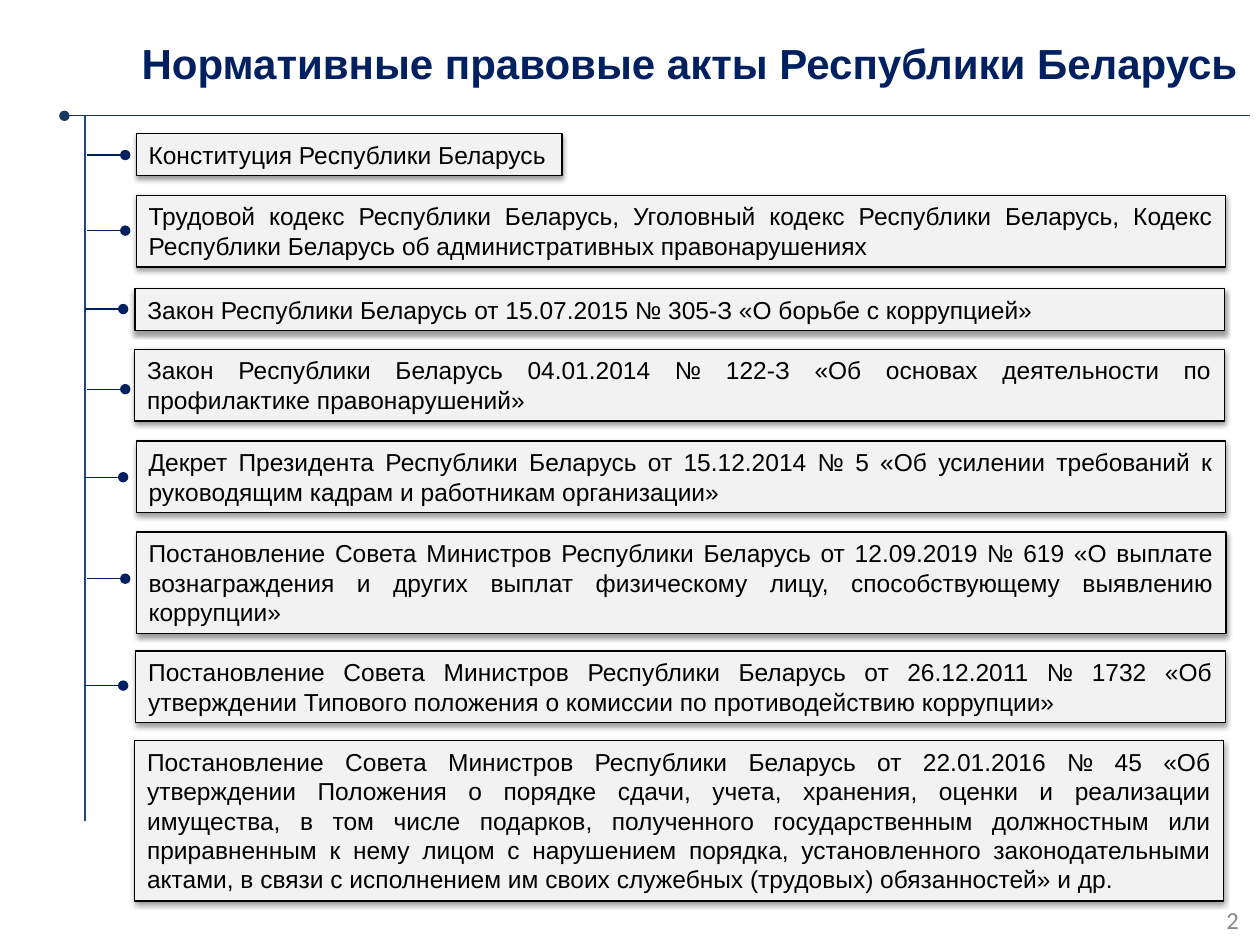
from lxml import etree
from pptx import Presentation
from pptx.dml.color import RGBColor
from pptx.enum.shapes import MSO_CONNECTOR, MSO_SHAPE
from pptx.enum.text import MSO_ANCHOR, MSO_AUTO_SIZE, PP_ALIGN
from pptx.oxml.ns import qn
from pptx.util import Pt

RECTANGLE = MSO_SHAPE.RECTANGLE
STRAIGHT = MSO_CONNECTOR.STRAIGHT
MIDDLE = MSO_ANCHOR.MIDDLE
FIT_SHAPE = MSO_AUTO_SIZE.SHAPE_TO_FIT_TEXT
RIGHT, JUSTIFY = PP_ALIGN.RIGHT, PP_ALIGN.JUSTIFY

BLACK = RGBColor(0x00, 0x00, 0x00)
NAVY = RGBColor(0x00, 0x20, 0x60)
RULE_BLUE = RGBColor(0x17, 0x37, 0x5E)
TRUNK_BLUE = RGBColor(0x1F, 0x49, 0x7D)
PANEL_GREY = RGBColor(0xF2, 0xF2, 0xF2)
NUMBER_GREY = RGBColor(0x88, 0x88, 0x88)

RULE_Y = 66.2
LINE_HEIGHT = 16.9
VERTICAL_MARGINS = 7.2

# left, top, width, number of text lines, (tip of branch x, y), text
ACTS = [
    (77.8, 76.3, 243.4, 1, (71.6, 88.6), "Конституция Республики Беларусь"),
    (77.8, 111.6, 622.4, 2, (71.6, 131.8),
     "Трудовой кодекс Республики Беларусь, Уголовный кодекс Республики Беларусь, "
     "Кодекс Республики Беларусь об административных правонарушениях "),
    (77.2, 164.9, 622.6, 1, (70.4, 176.6),
     "Закон Республики Беларусь от 15.07.2015 № 305-З «О борьбе с коррупцией»"),
    (77, 199.6, 622.6, 2, (71.6, 222.4),
     "Закон Республики Беларусь 04.01.2014 № 122-З «Об основах деятельности по "
     "профилактике правонарушений»"),
    (77.8, 252, 622.4, 2, (70.4, 272.7),
     "Декрет Президента Республики Беларусь от 15.12.2014 № 5 «Об усилении "
     "требований к руководящим кадрам и работникам организации»"),
    (77.8, 304, 622.8, 3, (71.6, 330.7),
     "Постановление Совета Министров Республики Беларусь от 12.09.2019 № 619 "
     "«О выплате вознаграждения и других выплат физическому лицу, "
     "способствующему выявлению коррупции»"),
    (77.6, 372, 622.6, 2, (70.4, 391.8),
     "Постановление Совета Министров Республики Беларусь от 26.12.2011 № 1732 "
     "«Об утверждении Типового положения о комиссии по противодействию коррупции»"),
    (77, 423.2, 622.2, 5, None,
     "Постановление Совета Министров Республики Беларусь от 22.01.2016 № 45 "
     "«Об утверждении Положения о порядке сдачи, учета, хранения, оценки и "
     "реализации имущества, в том числе подарков, полученного государственным "
     "должностным или приравненным к нему лицом с нарушением порядка, "
     "установленного законодательными актами, в связи с исполнением им своих "
     "служебных (трудовых) обязанностей» и др."),
]


def add_line(slide, start, end, color, dot=False):
    """Draw a thin line, with a round dot at its start if asked."""
    line = slide.shapes.add_connector(STRAIGHT, *map(Pt, start + end))
    line.line.color.rgb = color
    line.line.width = Pt(0.75)
    if dot:
        etree.SubElement(line.line._get_or_add_ln(), qn("a:headEnd"), type="oval")
    etree.SubElement(line._element.spPr, qn("a:effectLst"))


def add_soft_shadow(shape):
    shape.shadow.inherit = False
    effects = shape._element.spPr.find(qn("a:effectLst"))
    shadow = etree.SubElement(
        effects, qn("a:outerShdw"), blurRad=str(Pt(3.1)), dist=str(Pt(1.6)),
        dir="5400000", algn="t", rotWithShape="0")
    color = etree.SubElement(shadow, qn("a:srgbClr"), val=str(BLACK))
    etree.SubElement(color, qn("a:alpha"), val="38000")


def write_text(shape, text, size, color, alignment, font="Arial", bold=False):
    paragraph = shape.text_frame.paragraphs[0]
    paragraph.alignment = alignment
    run = paragraph.add_run()
    run.text = text
    run.font.name = font
    run.font.size = Pt(size)
    run.font.bold = bold
    run.font.color.rgb = color


def add_heading(slide, left, top, width, height):
    title = slide.shapes.add_textbox(*map(Pt, (left, top, width, height)))
    title.text_frame.word_wrap = True
    title.text_frame.auto_size = FIT_SHAPE
    write_text(title, "Нормативные правовые акты Республики Беларусь",
               24, NAVY, RIGHT, bold=True)
    add_line(slide, (36.8, RULE_Y), (714.2, RULE_Y), RULE_BLUE, dot=True)


def add_act(slide, left, top, width, line_count, text):
    height = VERTICAL_MARGINS + LINE_HEIGHT * line_count
    panel = slide.shapes.add_shape(RECTANGLE, *map(Pt, (left, top, width, height)))
    panel.fill.solid()
    panel.fill.fore_color.rgb = PANEL_GREY
    panel.line.color.rgb = BLACK
    panel.line.width = Pt(0.75)
    add_soft_shadow(panel)
    frame = panel.text_frame
    frame.word_wrap = line_count > 1
    frame.auto_size = FIT_SHAPE
    frame.vertical_anchor = MSO_ANCHOR.TOP
    write_text(panel, text, 14, BLACK, JUSTIFY)


def add_act_tree(slide, trunk_x, top, bottom):
    """Hang every legal act on a vertical trunk by a dotted branch."""
    add_line(slide, (trunk_x, top), (trunk_x, bottom), TRUNK_BLUE)
    for left, act_top, width, line_count, tip, text in ACTS:
        if tip:
            tip_x, tip_y = tip
            add_line(slide, tip, (tip_x - 22, tip_y), NAVY, dot=True)
        add_act(slide, left, act_top, width, line_count, text)


def add_slide_number(slide, left, top, width, height):
    number = slide.shapes.add_textbox(*map(Pt, (left, top, width, height)))
    number.text_frame.word_wrap = True
    number.text_frame.vertical_anchor = MIDDLE
    write_text(number, "2", 14, NUMBER_GREY, RIGHT, font="Calibri")


def main():
    presentation = Presentation()
    presentation.slide_width, presentation.slide_height = Pt(720), Pt(540)
    slide = presentation.slides.add_slide(presentation.slide_layouts[6])
    add_slide_number(slide, 547.2, 511.2, 167.8, 28.8)
    add_heading(slide, 64, 18, 650.2, 36)
    add_act_tree(slide, 48.6, RULE_Y, 469.4)
    presentation.save("out.pptx")


if __name__ == "__main__":
    main()
